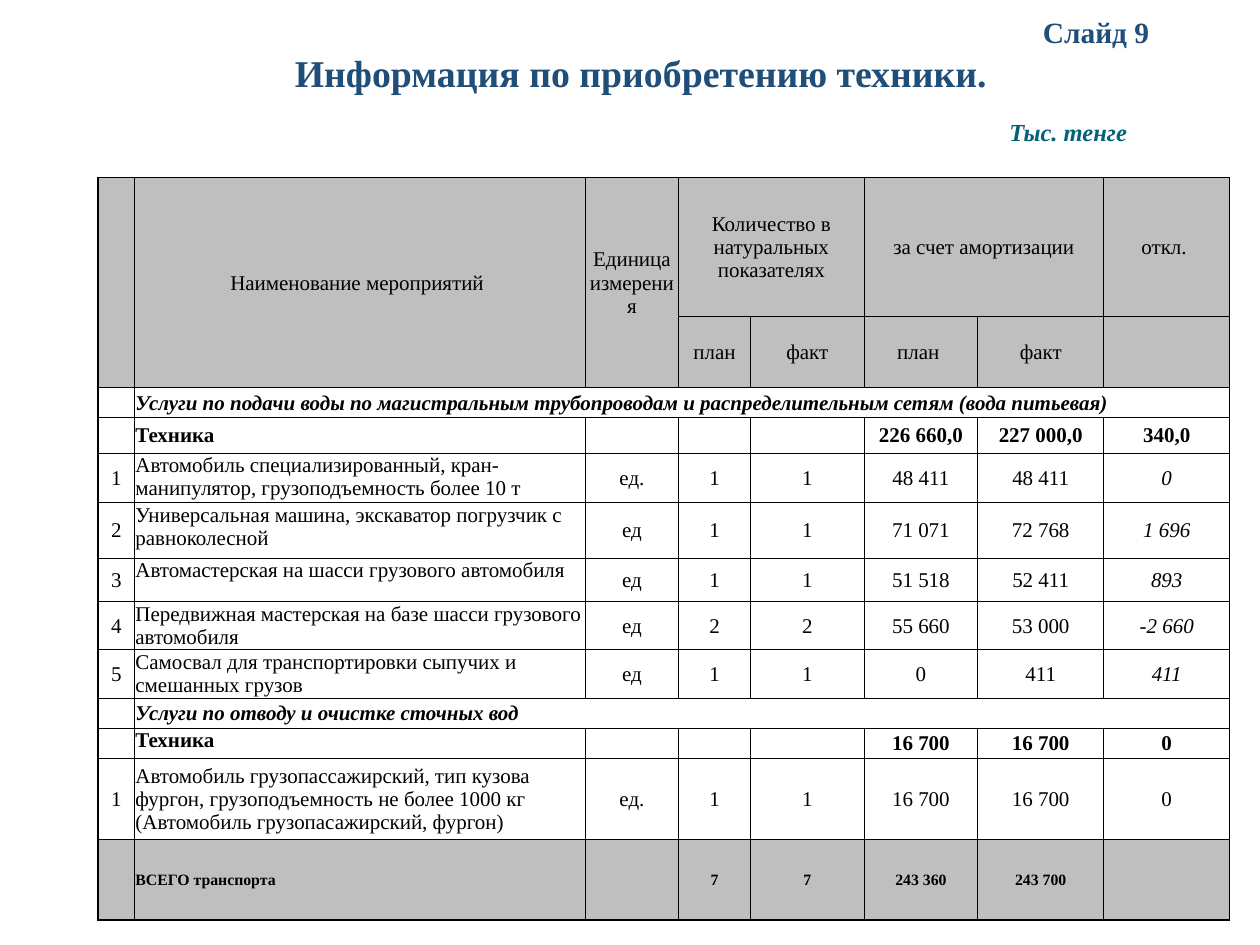
import pptx
import pptx.util
import pptx.dml.color
import pptx.enum.text
import lxml.etree
from pptx.oxml.ns import qn

Cm, Pt = pptx.util.Cm, pptx.util.Pt
Align, Anchor = pptx.enum.text.PP_ALIGN, pptx.enum.text.MSO_ANCHOR
FONT = "Times New Roman"
COLORS = {"title": "1F4E79", "unit": "04617B", "ink": "000000",
          "head": "BFBFBF", "body": "FFFFFF"}

COLS = [0.73, 9.09, 1.88, 1.45, 2.29, 2.29, 2.54, 2.54]
HEIGHTS = [2.8, 1.42, 0.61, 0.71, 1, 1.12, 0.88, 0.97, 0.97, 0.61, 0.61, 1.63, 1.63]
ROWS = [
    ["", "Наименование мероприятий ", "Единица измерения",
     "Количество в натуральных показателях", "", "за счет амортизации", "", "откл. "],
    ["", "", "", "план", "факт", "план ", "факт", ""],
    ["", "Услуги по подачи воды по магистральным трубопроводам и "
     "распределительным сетям (вода питьевая)"] + [""] * 6,
    ["", "Техника", "", "", "", "226 660,0", "227 000,0", "340,0"],
    ["1", "Автомобиль специализированный, кран-манипулятор, "
     "грузоподъемность более 10 т", "ед.", "1", "1", "48 411", "48 411", "0"],
    ["2", "Универсальная машина, экскаватор погрузчик с равноколесной",
     "ед", "1", "1", "71 071", "72 768", "1 696"],
    ["3", "Автомастерская на шасси грузового автомобиля",
     "ед", "1", "1", "51 518", "52 411", "893"],
    ["4", "Передвижная мастерская на базе шасси грузового автомобиля",
     "ед", "2", "2", "55 660", "53 000", "-2 660"],
    ["5", "Самосвал для транспортировки сыпучих и смешанных грузов",
     "ед", "1", "1", "0", "411", "411"],
    ["", "Услуги по отводу и очистке сточных вод"] + [""] * 6,
    ["", "Техника", "", "", "", "16 700", "16 700", "0"],
    ["1", "Автомобиль грузопассажирский, тип кузова фургон, грузоподъемность "
     "не более 1000 кг (Автомобиль грузопасажирский, фургон)",
     "ед.", "1", "1", "16 700", "16 700", "0"],
    ["", "ВСЕГО транспорта", "", "7", "7", "243 360", "243 700", ""],
]
LAST, EDGE = len(ROWS) - 1, len(COLS) - 1
GROUPS, SUMS, ITEMS = {2, 9}, {3, 10}, range(4, 9)
MERGES = [(0, 0, 1, 0), (0, 1, 1, 1), (0, 2, 1, 2), (0, 3, 0, 4), (0, 5, 0, 6),
          (2, 1, 2, 7), (9, 1, 9, 7)]


def write(frame, text, size=12, bold=False, italic=False, color="ink",
          align=Align.CENTER, space=None):
    para = frame.paragraphs[0]
    para.alignment = align
    para.line_spacing = space
    if not text:  # an empty cell still needs its text size
        end = lxml.etree.SubElement(para._p, qn("a:endParaRPr"))
        end.set("sz", str(size * 100))
        return
    run = para.add_run()
    run.text = text
    font = run.font
    font.name, font.size, font.bold, font.italic = FONT, Pt(size), bold, italic
    font.color.rgb = pptx.dml.color.RGBColor.from_string(COLORS[color])


def label(shape, box, text, **form):
    shape.left, shape.top, shape.width, shape.height = map(Cm, box)
    frame = shape.text_frame
    frame.word_wrap = True
    frame.auto_size = pptx.enum.text.MSO_AUTO_SIZE.NONE
    frame.vertical_anchor = Anchor.MIDDLE
    write(frame, text, **form)


def border(cell, row, col):
    outer = {"L": col == 0, "R": col == EDGE, "T": row == 0, "B": row == LAST}
    props = cell._tc.get_or_add_tcPr()
    for spot, (side, thick) in enumerate(outer.items()):
        line = lxml.etree.Element(qn("a:ln" + side), w=str(Pt(1 if thick else 0.5)))
        fill = lxml.etree.SubElement(line, qn("a:solidFill"))
        lxml.etree.SubElement(fill, qn("a:srgbClr"), val=COLORS["ink"])
        props.insert(spot, line)


def style(cell, row, col, text):
    cell.margin_left = cell.margin_right = cell.margin_top = Cm(0.02)
    cell.margin_bottom = 0
    top = col == 1 and (row in ITEMS or row == 10)
    cell.vertical_anchor = Anchor.TOP if top else Anchor.MIDDLE
    cell.fill.solid()
    tone = "head" if row in (0, 1, LAST) else "body"
    cell.fill.fore_color.rgb = pptx.dml.color.RGBColor.from_string(COLORS[tone])
    border(cell, row, col)
    write(cell.text_frame, text, size=9 if row == LAST else 12,
          bold=row in GROUPS | SUMS | {LAST},
          italic=row in GROUPS or (row in ITEMS and col == EDGE),
          align=Align.LEFT if col == 1 and row > 1 else Align.CENTER)


def grid(slide, left, top):
    table = slide.shapes.add_table(len(ROWS), len(COLS), Cm(left), Cm(top),
                                   Cm(sum(COLS)), Cm(sum(HEIGHTS))).table
    table.first_row = table.horz_banding = False
    for col, width in zip(table.columns, COLS):
        col.width = Cm(width)
    for row, height in zip(table.rows, HEIGHTS):
        row.height = Cm(height)
    for row, texts in enumerate(ROWS):
        for col, text in enumerate(texts):
            style(table.cell(row, col), row, col, text)
    for row, col, end, stop in MERGES:
        table.cell(row, col).merge(table.cell(end, stop))


def header(slide):
    label(slide.shapes.title, (1.9, 1.12, 22.23, 0.79),
          "Информация по приобретению техники. ",
          size=21.6, bold=True, color="title", space=0.9)
    # Currency unit and slide number
    notes = [
        ((20.1, 1.8, 4.04, 1.8), "Тыс. тенге",
         dict(size=14, italic=True, color="unit", align=Align.JUSTIFY, space=0.9)),
        ((18.69, 0.33, 6.81, 0.79), "Слайд 9",
         dict(size=16.8, color="title", space=0.7)),
    ]
    for box, text, form in notes:
        shape = slide.shapes.add_textbox(0, 0, 0, 0)
        label(shape, box, text, bold=True, **form)


def main():
    deck = pptx.Presentation()
    deck.slide_width, deck.slide_height = Cm(25.4), Cm(19.05)
    slide = deck.slides.add_slide(deck.slide_layouts[5])
    header(slide)
    grid(slide, 1.98, 3.58)
    deck.save("out.pptx")


if __name__ == "__main__":
    main()
